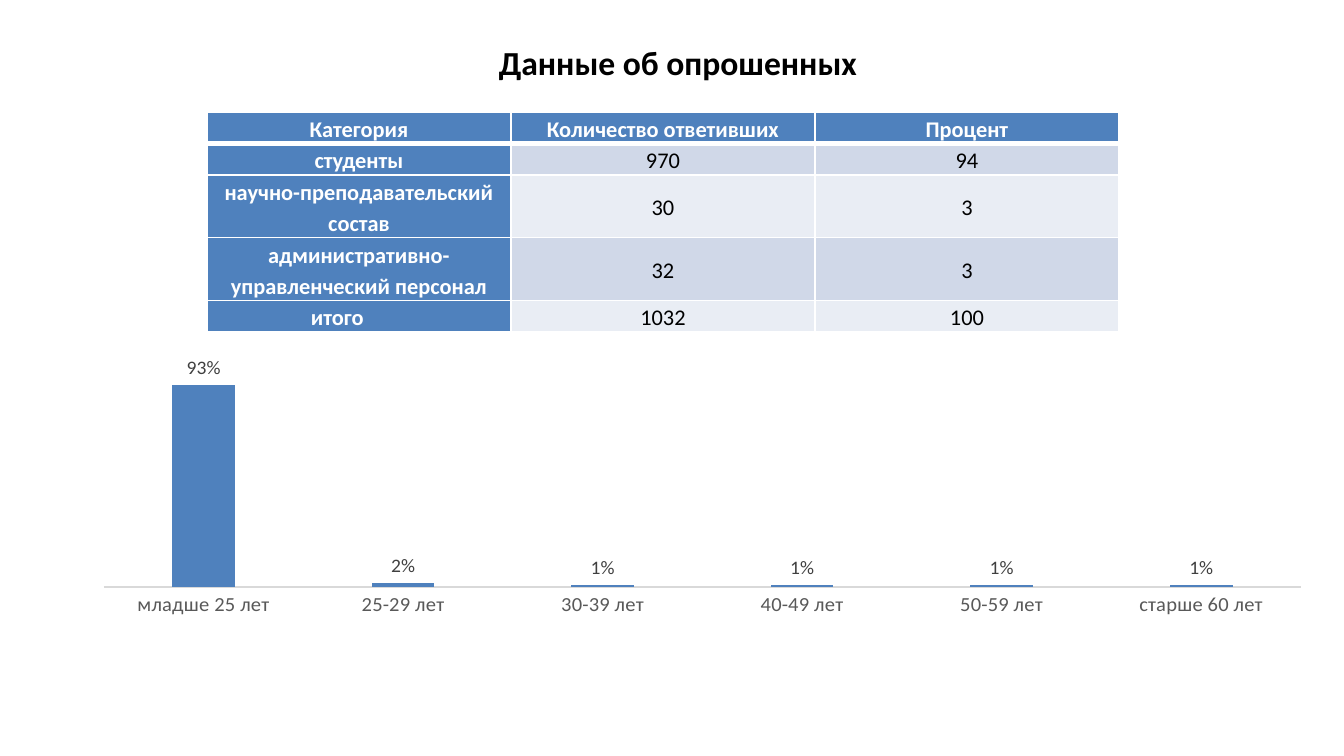
from dataclasses import dataclass
from lxml.etree import SubElement
from pptx import Presentation
from pptx.chart.data import CategoryChartData
from pptx.dml.color import RGBColor as RGB
from pptx.enum.chart import XL_CHART_TYPE as ChartType, XL_LABEL_POSITION as LabelPos, XL_TICK_MARK as Tick
from pptx.enum.text import MSO_ANCHOR as Anchor, PP_ALIGN as Align
from pptx.oxml.ns import qn
from pptx.util import Emu, Pt


@dataclass(frozen=True)
class Theme:
    font: str = "Calibri"
    black: str = "000000"
    white: str = "FFFFFF"
    blue: str = "4F81BD"
    odd_row: str = "D0D8E8"
    even_row: str = "E9EDF4"
    axis_line: str = "D9D9D9"
    axis_text: str = "595959"
    label_text: str = "404040"
    title_size: float = 18
    table_size: float = 12
    axis_size: float = 11
    label_size: float = 10.5
    chart_size: float = 10


theme = Theme()
EMU_PER_PX = 914400 / 134.4


def px(count):
    return Emu(round(count * EMU_PER_PX))


def set_font(font, size, color, bold=False):
    font.name = theme.font
    font.size = Pt(size)
    font.bold = bold
    font.color.rgb = RGB.from_string(color)


prs = Presentation()
prs.slide_width, prs.slide_height = px(1344), px(756)
slide = prs.slides.add_slide(prs.slide_layouts[5])

title = slide.shapes.title
title.left, title.top, title.width, title.height = px(79), px(31), px(1198), px(63)
title.text_frame.text = "Данные об опрошенных"
title.text_frame.vertical_anchor = Anchor.MIDDLE
heading = title.text_frame.paragraphs[0]
heading.alignment = Align.CENTER
set_font(heading.font, theme.title_size, theme.black, True)

respondents = [
    ("Категория", "Количество ответивших", "Процент"),
    ("студенты", "970", "94"),
    ("научно-преподавательский состав", "30", "3"),
    ("административно-управленческий персонал", "32", "3"),
    ("итого", "1032", "100"),
]
table = slide.shapes.add_table(5, 3, px(207), px(112), px(912), px(130)).table
for column in table.columns:
    column.width = px(304)
for r, values in enumerate(respondents):
    table.rows[r].height = px(26)
    for c, value in enumerate(values):
        cell = table.cell(r, c)
        is_header = r == 0 or c == 0
        cell.text = value
        cell.vertical_anchor = Anchor.MIDDLE
        cell.margin_left = cell.margin_right = px(9)
        cell.margin_top = cell.margin_bottom = 0

        props = cell._tc.get_or_add_tcPr()
        for side in ("lnL", "lnR", "lnT", "lnB"):
            under_header = (r, side) in ((0, "lnB"), (1, "lnT"))
            border = SubElement(props, qn(f"a:{side}"), w=str(Pt(3 if under_header else 1)))
            SubElement(SubElement(border, qn("a:solidFill")), qn("a:srgbClr"), val=theme.white)

        band = theme.odd_row if r % 2 else theme.even_row
        cell.fill.solid()
        cell.fill.fore_color.rgb = RGB.from_string(theme.blue if is_header else band)
        entry = cell.text_frame.paragraphs[0]
        entry.alignment = Align.CENTER
        entry.line_spacing = 1.15
        set_font(entry.font, theme.table_size, theme.white if is_header else theme.black, is_header)

total = table.cell(4, 0).text_frame.paragraphs[0]
total.alignment = Align.LEFT
total._p.get_or_add_pPr().set("indent", str(px(95)))

ages = CategoryChartData(number_format="0%")
ages.categories = ["младше 25 лет", "25-29 лет", "30-39 лет", "40-49 лет", "50-59 лет", "старше 60 лет"]
ages.add_series("Series 1", [0.93, 0.02, 0.01, 0.01, 0.01, 0.01])
chart = slide.shapes.add_chart(
    ChartType.COLUMN_CLUSTERED, px(79), px(357), px(1247), px(265), ages
).chart
chart.has_title = False
chart.has_legend = False
set_font(chart.font, theme.chart_size, theme.black)

age_axis = chart.category_axis
age_axis.major_tick_mark = age_axis.minor_tick_mark = Tick.NONE
age_axis.format.line.width = Pt(0.75)
age_axis.format.line.color.rgb = RGB.from_string(theme.axis_line)
set_font(age_axis.tick_labels.font, theme.axis_size, theme.axis_text)

share_axis = chart.value_axis
share_axis.visible = False
share_axis.has_major_gridlines = False
share_axis.minimum_scale, share_axis.maximum_scale = 0, 1

plot = chart.plots[0]
plot.gap_width, plot.overlap = 219, -27
plot.vary_by_categories = False
shares = plot.series[0]
shares.format.fill.solid()
shares.format.fill.fore_color.rgb = RGB.from_string(theme.blue)
labels = shares.data_labels
labels.show_value = True
labels.position = LabelPos.OUTSIDE_END
labels.number_format = "0%"
labels.number_format_is_linked = False
set_font(labels.font, theme.label_size, theme.label_text)

prs.save("out.pptx")
